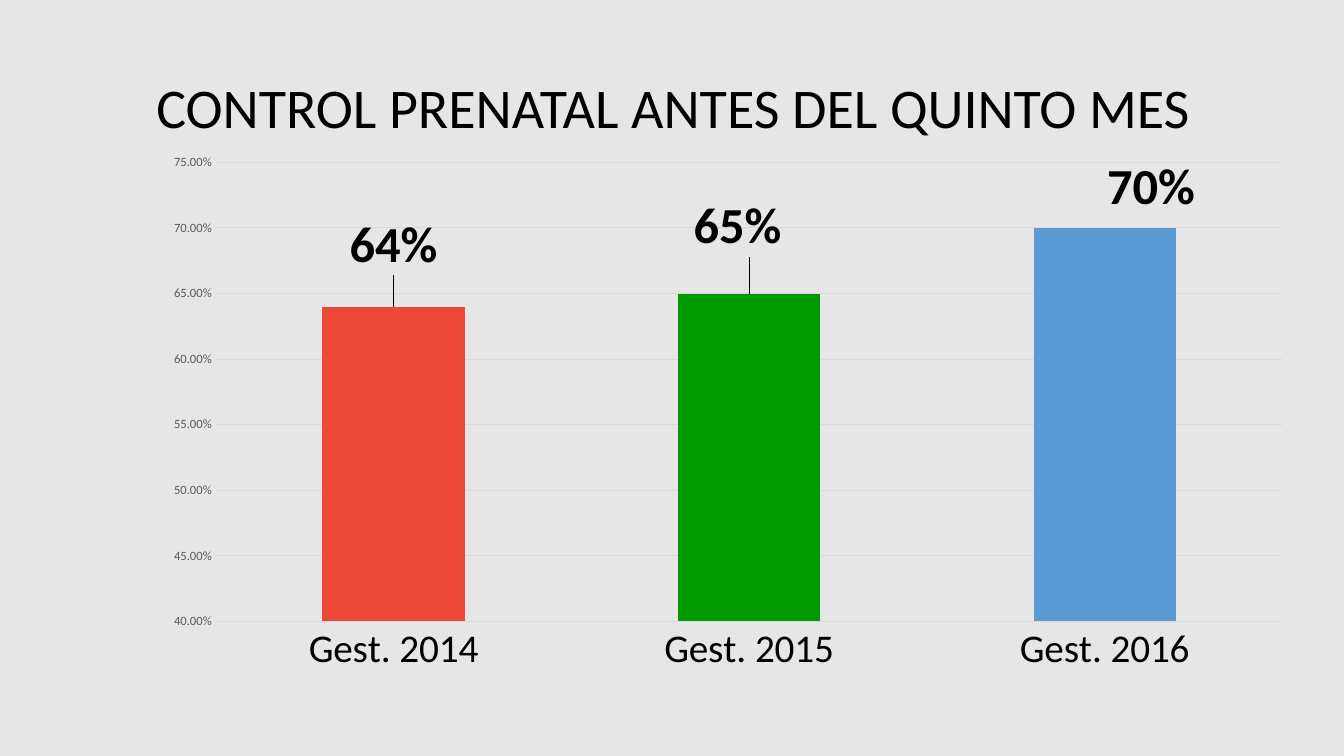
"""Build the slide with the column chart of early prenatal check-ups."""
from pptx import Presentation
from pptx.chart.data import CategoryChartData
from pptx.dml.color import RGBColor
from pptx.enum.chart import XL_CHART_TYPE as ChartType, XL_LABEL_POSITION as LabelPos
from pptx.enum.chart import XL_TICK_MARK as Tick
from pptx.enum.text import MSO_ANCHOR, PP_ALIGN
from pptx.oxml import parse_xml
from pptx.oxml.ns import nsdecls
from pptx.util import Inches, Pt


def style(font, size, color="000000", bold=False):
    font.name, font.size, font.bold = "Calibri", Pt(size), bold
    font.color.rgb = RGBColor.from_string(color)


def layout(target="", **place):
    modes = "".join(f'<c:{k}Mode val="edge"/>' for k in "xy") if target else ""
    values = "".join(f'<c:{k} val="{v}"/>' for k, v in place.items())
    return parse_xml(f'<c:layout {nsdecls("c")}><c:manualLayout>{target}{modes}{values}'
                     '</c:manualLayout></c:layout>')


prs = Presentation()
prs.slide_width, prs.slide_height = Inches(13.33), Inches(7.5)
s = prs.slides.add_slide(prs.slide_layouts[5])
s.background.fill.solid()
s.background.fill.fore_color.rgb = RGBColor.from_string("E7E6E6")

title = s.shapes.title
title.left, title.top = Inches(1.45), Inches(0.67)
title.width, title.height = Inches(10.82), Inches(0.77)
tf = title.text_frame
tf.word_wrap = False
tf.vertical_anchor = MSO_ANCHOR.TOP
p = tf.paragraphs[0]
p.text = "CONTROL PRENATAL ANTES DEL QUINTO MES"
p.alignment = PP_ALIGN.LEFT
style(p.font, 40)

data = CategoryChartData(number_format="0%")
data.categories = ["Gest. 2014", "Gest. 2015", "Gest. 2016"]
data.add_series("Series 1", [0.64, 0.65, 0.7])
chart = s.shapes.add_chart(ChartType.COLUMN_CLUSTERED, Inches(1.45), Inches(1.45),
                           Inches(11.5), Inches(5.36), data).chart
chart.has_legend = chart.has_title = False
style(chart.font, 10)

cat, val = chart.category_axis, chart.value_axis
for axis, size, color in [(cat, 28, "000000"), (val, 9, "595959")]:
    style(axis.tick_labels.font, size, color)
    axis.major_tick_mark = axis.minor_tick_mark = Tick.NONE
    axis.format.line.fill.background()
val.minimum_scale, val.maximum_scale, val.major_unit = 0.4, 0.75, 0.05
val.tick_labels.number_format = "0.00%"
val.tick_labels.number_format_is_linked = False
grid = val.major_gridlines.format.line
grid.width = Pt(0.75)
grid.color.rgb = RGBColor.from_string("D9D9D9")

plot = chart.plots[0]
plot.gap_width, plot.vary_by_categories = 150, False
series = plot.series[0]
labels = series.data_labels
labels.show_value = True
labels.number_format, labels.number_format_is_linked = "0%", False
labels.position = LabelPos.OUTSIDE_END
style(labels.font, 36, bold=True)

for i, color in enumerate(["ED4837", "009900", "5B9BD5"]):
    point = series.points[i]
    point.format.fill.solid()
    point.format.fill.fore_color.rgb = RGBColor.from_string(color)
    style(point.data_label.font, 36, bold=True)
    point.data_label.position = LabelPos.OUTSIDE_END

shifts = [(0, -0.05), (-0.01, -0.06), (0.04, -0.01)]
for label, (x, y) in zip(series._element.xpath("c:dLbls/c:dLbl"), shifts):
    label.insert(1, layout(x=x, y=y))

area = chart._chartSpace.chart.plotArea
for old in area.xpath("c:layout"):
    area.remove(old)
area.insert(0, layout('<c:layoutTarget val="inner"/>', x=0.06, y=0.03, w=0.92, h=0.85))

prs.save("out.pptx")
